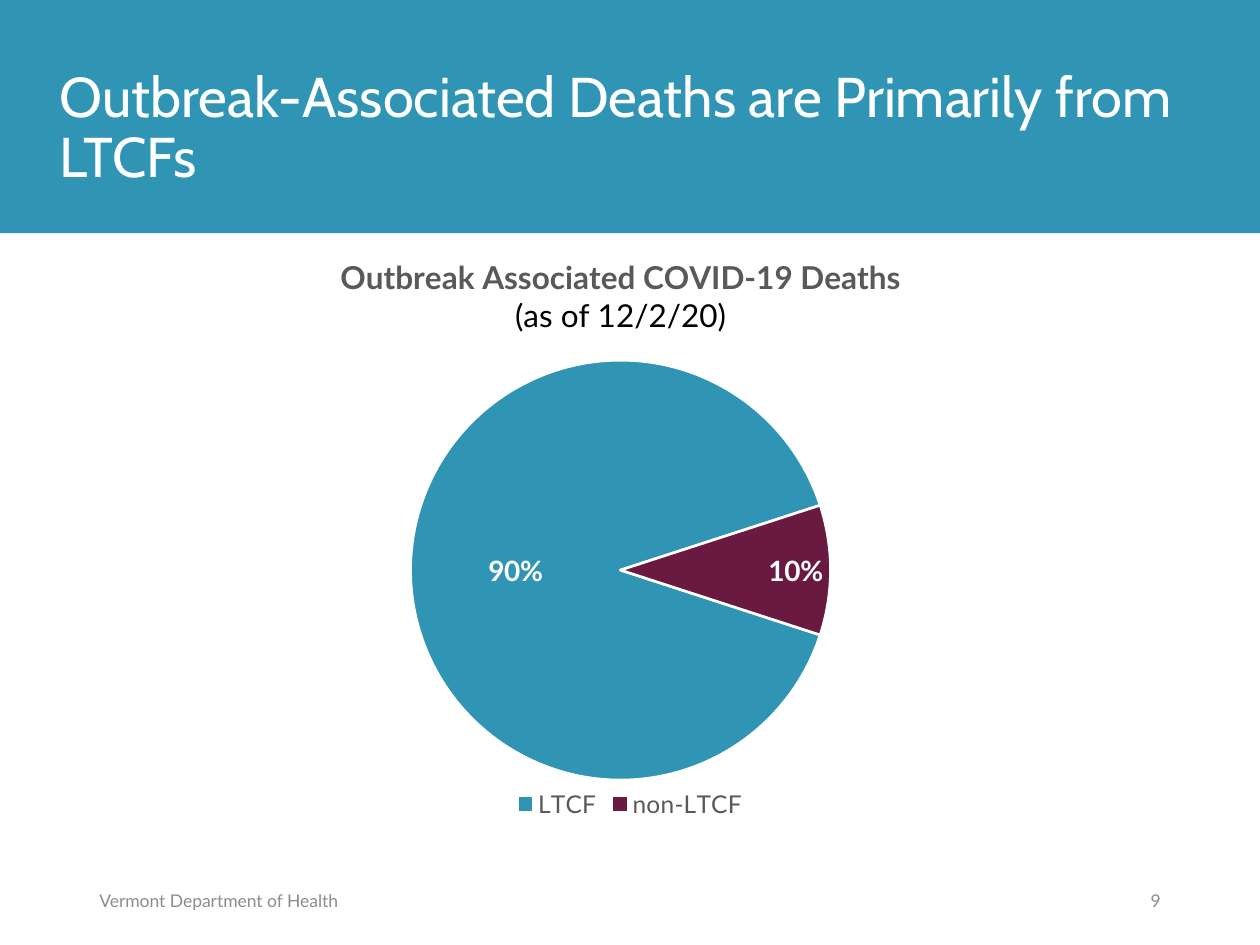
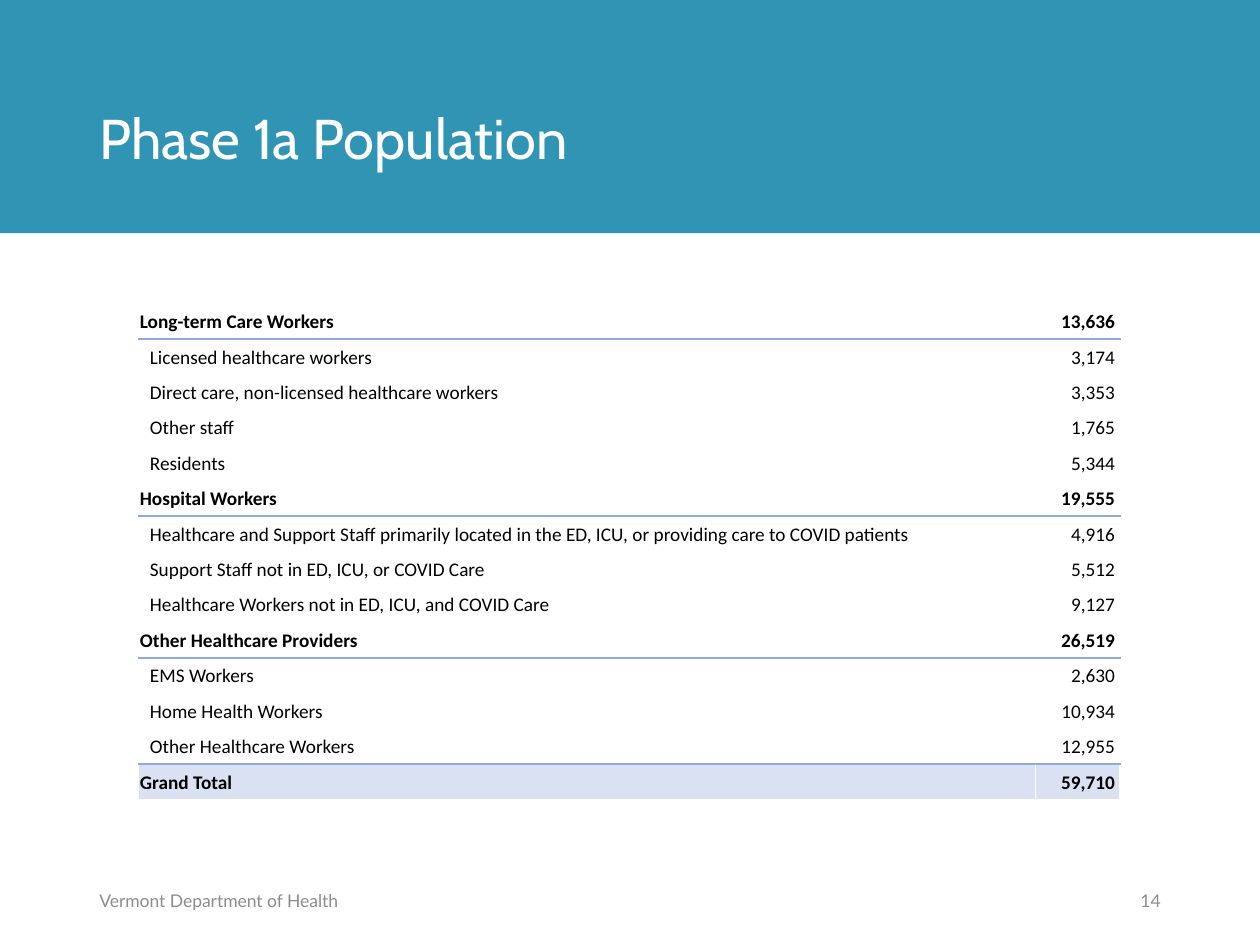
"""Build two slides on outbreak deaths and the Phase 1a population."""
from dataclasses import dataclass

from lxml.etree import SubElement
from pptx import Presentation
from pptx.chart.data import CategoryChartData
from pptx.dml.color import RGBColor
from pptx.enum.chart import XL_CHART_TYPE, XL_LABEL_POSITION, XL_LEGEND_POSITION
from pptx.enum.shapes import MSO_SHAPE
from pptx.enum.text import MSO_ANCHOR, MSO_AUTO_SIZE, PP_ALIGN
from pptx.oxml import parse_xml
from pptx.oxml.ns import nsdecls, qn
from pptx.util import Inches, Pt

COLORS = {
    "teal": "3095B4", "plum": "6A1A41", "white": "FFFFFF", "black": "000000",
    "footer": "8C8C8C", "gray": "595959", "rule": "8EA9DB", "total": "D9E1F2",
}
FONTS = {
    "title": {"name": "Cabin", "size": Pt(32), "bold": False},
    "footer": {"name": "Lato", "size": Pt(10)},
    "chart": {"name": "Lato", "size": Pt(10)},
    "chart title": {"name": "Lato", "size": Pt(18), "bold": True},
    "chart date": {"name": "Lato", "size": Pt(18), "bold": False},
    "legend": {"name": "Lato", "size": Pt(14)},
    "label": {"name": "Lato", "size": Pt(16), "bold": True},
    "group": {"name": "Calibri", "size": Pt(11), "bold": True},
    "detail": {"name": "Calibri", "size": Pt(11), "bold": False},
}


@dataclass(frozen=True)
class Box:
    """A place on the slide, in inches."""
    left: float
    top: float
    width: float
    height: float

    def lengths(self) -> tuple:
        """Return left, top, width and height as lengths."""
        return tuple(Inches(v) for v in (self.left, self.top, self.width, self.height))


@dataclass(frozen=True)
class Slice:
    """One slice of the pie."""
    name: str
    value: float
    color: str
    label_position: XL_LABEL_POSITION


@dataclass(frozen=True)
class Row:
    """One row of the population table."""
    label: str
    count: str
    kind: str = "detail"


BAND = Box(0, 0, 10, 1.85)
FOOTER = Box(0.69, 6.95, 3.38, 0.4)
NUMBER = Box(7.06, 6.95, 2.25, 0.4)
SLICES = [
    Slice("LTCF", 0.9, "teal", XL_LABEL_POSITION.CENTER),
    Slice("non-LTCF", 0.1, "plum", XL_LABEL_POSITION.INSIDE_END),
]
ROWS = [
    Row("Long-term Care Workers", "13,636", "group"),
    Row("Licensed healthcare workers", "3,174"),
    Row("Direct care, non-licensed healthcare workers", "3,353"),
    Row("Other staff", "1,765"),
    Row("Residents", "5,344"),
    Row("Hospital Workers", "19,555", "group"),
    Row("Healthcare and Support Staff primarily located in the ED, ICU, "
        "or providing care to COVID patients", "4,916"),
    Row("Support Staff not in ED, ICU, or COVID Care", "5,512"),
    Row("Healthcare Workers not in ED, ICU, and COVID Care", "9,127"),
    Row("Other Healthcare Providers", "26,519", "group"),
    Row("EMS Workers", "2,630"),
    Row("Home Health Workers", "10,934"),
    Row("Other Healthcare Workers", "12,955"),
    Row("Grand Total", "59,710", "total"),
]


def rgb(name: str) -> RGBColor:
    """Return a palette colour."""
    return RGBColor.from_string(COLORS[name])


def apply(obj, values: dict) -> None:
    """Set each named attribute of an object."""
    for name, value in values.items():
        setattr(obj, name, value)


def set_font(font, style: str, color: str) -> None:
    """Apply a font style and colour."""
    apply(font, FONTS[style])
    font.color.rgb = rgb(color)


def write(p, text: str, style: str, color: str, align=PP_ALIGN.LEFT) -> None:
    """Write one formatted run into a paragraph."""
    p.alignment = align
    r = p.add_run()
    r.text = text
    set_font(r.font, style, color)


def add_footer(s, box: Box, text: str, align) -> None:
    """Add one text of the footer line."""
    tf = s.shapes.add_textbox(*box.lengths()).text_frame
    apply(tf, {"word_wrap": True, "vertical_anchor": MSO_ANCHOR.MIDDLE})
    write(tf.paragraphs[0], text, "footer", "footer", align)


def add_slide(prs, title: str, title_box: Box, number: int):
    """Add a slide with band, title and footer."""
    s = prs.slides.add_slide(prs.slide_layouts[5])
    band = s.shapes.add_shape(MSO_SHAPE.RECTANGLE, *BAND.lengths())
    band.shadow.inherit = False
    band.fill.solid()
    band.fill.fore_color.rgb = rgb("teal")
    band.line.fill.background()
    sp = s.shapes.title
    sp.element.addprevious(band.element)
    apply(sp, dict(zip(("left", "top", "width", "height"), title_box.lengths())))
    tf = sp.text_frame
    apply(tf, {"word_wrap": True, "auto_size": MSO_AUTO_SIZE.NONE,
               "vertical_anchor": MSO_ANCHOR.MIDDLE})
    p = tf.paragraphs[0]
    p.line_spacing = 0.9
    write(p, title, "title", "white")
    add_footer(s, NUMBER, str(number), PP_ALIGN.RIGHT)
    add_footer(s, FOOTER, "Vermont Department of Health", PP_ALIGN.LEFT)
    return s


def place(element, after: str, **values) -> None:
    """Give a chart part a manual layout, as shares of the chart."""
    for old in element.findall(qn("c:layout")):
        element.remove(old)
    layout = parse_xml(f"<c:layout {nsdecls('c')}><c:manualLayout/></c:layout>")
    for name, value in values.items():
        SubElement(layout[0], qn(f"c:{name}")).set("val", str(value))
    anchor = element.find(qn(after)) if after else None
    if anchor is None:
        element.insert(0, layout)
    else:
        anchor.addnext(layout)


def add_deaths_chart(s, box: Box) -> None:
    """Add the pie of outbreak deaths."""
    data = CategoryChartData(number_format="0%")
    data.categories = [item.name for item in SLICES]
    data.add_series("Series 1", [item.value for item in SLICES])
    chart = s.shapes.add_chart(XL_CHART_TYPE.PIE, *box.lengths(), data).chart
    set_font(chart.font, "chart", "black")
    tf = chart.chart_title.text_frame
    write(tf.paragraphs[0], "Outbreak Associated COVID-19 Deaths",
          "chart title", "gray", PP_ALIGN.CENTER)
    write(tf.add_paragraph(), "(as of 12/2/20)", "chart date", "black", PP_ALIGN.CENTER)
    chart.has_legend = True
    apply(chart.legend, {"position": XL_LEGEND_POSITION.BOTTOM, "include_in_layout": False})
    set_font(chart.legend.font, "legend", "gray")
    plot = chart.plots[0]
    plot.vary_by_categories = True
    for i, item in enumerate(SLICES):
        point = plot.series[0].points[i]
        point.format.fill.solid()
        point.format.fill.fore_color.rgb = rgb(item.color)
        point.format.line.color.rgb = rgb("white")
        point.format.line.width = Pt(1.5)
        set_font(point.data_label.font, "label", "white")
        point.data_label.position = item.label_position
    pie = chart.element.find(".//" + qn("c:pieChart"))
    angle = pie.find(qn("c:firstSliceAng"))
    if angle is None:
        angle = SubElement(pie, qn("c:firstSliceAng"))
    angle.set("val", "108")
    place(pie.getparent(), "", layoutTarget="inner", xMode="edge", yMode="edge",
          x=0.31, y=0.2, w=0.38, h=0.69)
    place(chart.element.find(".//" + qn("c:legend")), "c:legendPos",
          xMode="edge", yMode="edge", x=0.4, y=0.89)


def add_rule(cell, side: str) -> None:
    """Draw a rule on the top (lnT) or bottom (lnB) of a cell."""
    cell._tc.get_or_add_tcPr().insert(0, parse_xml(
        f'<a:{side} {nsdecls("a")} w="12700"><a:solidFill>'
        f'<a:srgbClr val="{COLORS["rule"]}"/></a:solidFill></a:{side}>'))


def add_population_table(s, box: Box) -> None:
    """Add the table of Phase 1a groups."""
    table = s.shapes.add_table(len(ROWS), 2, *box.lengths()).table
    apply(table, {"first_row": False, "horz_banding": False})
    for column, width in zip(table.columns, (7.12, 0.67)):
        column.width = Inches(width)
    for i, row in enumerate(ROWS):
        above = ROWS[i - 1].kind if i else ""
        below = ROWS[i + 1].kind if i + 1 < len(ROWS) else ""
        detail = row.kind == "detail"
        for j, text in enumerate((row.label, row.count)):
            cell = table.cell(i, j)
            apply(cell, {
                "vertical_anchor": MSO_ANCHOR.MIDDLE,
                "margin_left": Inches(0.09 if detail and j == 0 else 0.01),
                "margin_right": Inches(0.04 if j else 0.01),
                "margin_top": Inches(0.01), "margin_bottom": 0,
            })
            if row.kind == "total":
                cell.fill.solid()
                cell.fill.fore_color.rgb = rgb("total")
            else:
                cell.fill.background()
            write(cell.text_frame.paragraphs[0], text, "detail" if detail else "group",
                  "black", PP_ALIGN.RIGHT if j else PP_ALIGN.LEFT)
            if row.kind == "group" or below == "total":
                add_rule(cell, "lnB")
            if above == "group" or row.kind == "total":
                add_rule(cell, "lnT")


def main() -> None:
    """Build and save the slides."""
    prs = Presentation()
    apply(prs, {"slide_width": Inches(10), "slide_height": Inches(7.5)})
    s = add_slide(prs, "Outbreak-Associated Deaths are Primarily from LTCFs",
                  Box(0.37, 0.3, 9.27, 1.45), 9)
    add_deaths_chart(s, Box(0.54, 1.85, 8.77, 4.91))
    s = add_slide(prs, "Phase 1a Population", Box(0.69, 0.4, 8.62, 1.45), 14)
    add_population_table(s, Box(1.1, 2.41, 7.79, 3.94))
    prs.save("out.pptx")


if __name__ == "__main__":
    main()
